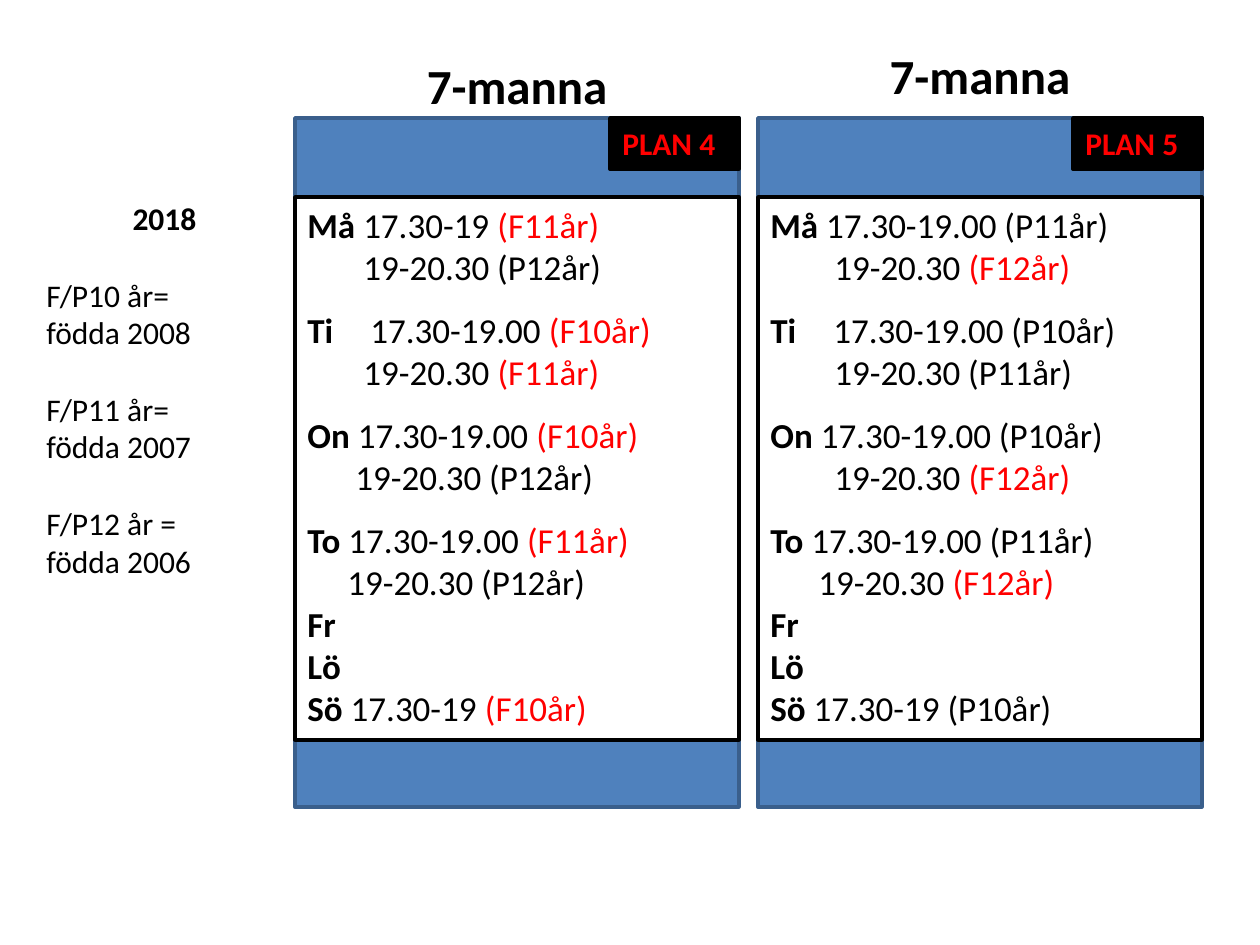
import dataclasses

import lxml.etree
import pptx
import pptx.dml.color
import pptx.enum.shapes
import pptx.enum.text
import pptx.oxml.ns
import pptx.util

PX = 914400 / 126
SPACE = 8
TAB = 50


@dataclasses.dataclass(frozen=True)
class Theme:
    """Colours and type sizes of the schedule."""
    font: str = "Calibri"
    black: str = "000000"
    white: str = "FFFFFF"
    red: str = "FF0000"
    field: str = "4F81BD"
    field_edge: str = "3A5F8C"
    heading: int = 28
    session: int = 20
    note: int = 18
    edge: int = 2
    session_gap: int = 12
    note_gap: int = 22


THEME = Theme()

PITCHES = [
    {"left": 295, "heading_top": 49, "label": "PLAN 4", "sessions": [
        ("Må ", 0, "17.30-19 ", "(F11år)"),
        ("", 7, "19-20.30 ", "(P12år)"),
        ("Ti\t", 0, "17.30-19.00 ", "(F10år)"),
        ("", 7, "19-20.30 ", "(F11år)"),
        ("On ", 0, "17.30-19.00 ", "(F10år)"),
        ("", 6, "19-20.30 ", "(P12år)"),
        ("To ", 0, "17.30-19.00 ", "(F11år)"),
        ("", 5, "19-20.30 ", "(P12år)"),
        ("Fr", 0, "", ""),
        ("Lö", 0, "", ""),
        ("Sö ", 0, "17.30-19 ", "(F10år)")]},
    {"left": 758, "heading_top": 39, "label": "PLAN 5", "sessions": [
        ("Må ", 0, "17.30-19.00 ", "(P11år)"),
        ("", 8, "19-20.30 ", "(F12år)"),
        ("Ti\t", 0, "17.30-19.00 ", "(P10år)"),
        ("", 8, "19-20.30 ", "(P11år)"),
        ("On ", 0, "17.30-19.00 ", "(P10år)"),
        ("", 8, "19-20.30 ", "(F12år)"),
        ("To ", 0, "17.30-19.00 ", "(P11år)"),
        ("", 6, "19-20.30 ", "(F12år)"),
        ("Fr", 0, "", ""),
        ("Lö", 0, "", ""),
        ("Sö ", 0, "17.30-19 ", "(P10år)")]},
]
SPACED_DAYS = ("Ti\t", "On ", "To ")

AGE_GROUPS = [("F/P10 år=", "födda 2008"), ("F/P11 år=", "födda 2007"),
              ("F/P12 år =", "födda 2006")]


def emu(px):
    """Turn px into EMU."""
    return pptx.util.Emu(round(px * PX))


def rgb(value):
    """Turn a hex string into a colour."""
    return pptx.dml.color.RGBColor.from_string(value)


def set_attributes(target, values):
    """Set each attribute named in a dict of format values."""
    for name, value in values.items():
        setattr(target, name, value)


def prepare_frame(frame):
    """Make a text frame wrap, start at the top and fit its text."""
    set_attributes(frame, {
        "word_wrap": True,
        "vertical_anchor": pptx.enum.text.MSO_ANCHOR.TOP,
        "auto_size": pptx.enum.text.MSO_AUTO_SIZE.SHAPE_TO_FIT_TEXT})
    return frame


def add_panel(slide, box, fill, edge):
    """Add a filled rectangle and return its text frame."""
    panel = slide.shapes.add_shape(
        pptx.enum.shapes.MSO_SHAPE.RECTANGLE, *map(emu, box))
    panel.shadow.inherit = False
    panel.fill.solid()
    panel.fill.fore_color.rgb = rgb(fill)
    panel.line.color.rgb = rgb(edge)
    panel.line.width = pptx.util.Pt(THEME.edge)
    return panel.text_frame


def add_label(slide, box):
    """Add a text box and return its prepared frame."""
    return prepare_frame(slide.shapes.add_textbox(*map(emu, box)).text_frame)


def add_line(frame, runs, size, centred=False, gap=0):
    """Write one paragraph from (text, bold, colour) runs."""
    first = not frame.paragraphs[0].runs
    line = frame.paragraphs[0] if first else frame.add_paragraph()
    align = pptx.enum.text.PP_ALIGN
    set_attributes(line, {
        "alignment": align.CENTER if centred else align.LEFT,
        "space_before": pptx.util.Pt(gap)})
    for text, bold, colour in runs:
        if text:
            run = line.add_run()
            run.text = text
            set_attributes(run.font, {"name": THEME.font, "bold": bold,
                                      "size": pptx.util.Pt(size)})
            run.font.color.rgb = rgb(colour)
    return line


def indent_line(line, spaces):
    """Indent a session line and give it the tab stop for its time."""
    properties = line._p.get_or_add_pPr()
    properties.set("marL", str(emu(spaces * SPACE)))
    properties.set("indent", "0")
    stops = lxml.etree.SubElement(properties, pptx.oxml.ns.qn("a:tabLst"))
    lxml.etree.SubElement(stops, pptx.oxml.ns.qn("a:tab"),
                          pos=str(emu(TAB)), algn="l")


def add_pitch(slide, box, heading_top, label, sessions):
    """Draw one pitch with its heading, name tag and training times."""
    left, top, width, height = box
    add_panel(slide, box, THEME.field, THEME.field_edge)

    schedule = prepare_frame(add_panel(
        slide, (left, top + 79, width, 543), THEME.white, THEME.black))
    for day, spaces, time, group in sessions:
        group_colour = THEME.red if group.startswith("(F") else THEME.black
        line = add_line(
            schedule,
            [(day, True, THEME.black), (time, False, THEME.black),
             (group, False, group_colour)],
            THEME.session,
            gap=THEME.session_gap if day in SPACED_DAYS else 0)
        indent_line(line, spaces)

    tag_width = 129
    tag = prepare_frame(add_panel(
        slide, (left + width - tag_width, top, tag_width, 51),
        THEME.black, THEME.black))
    add_line(tag, [(label, True, THEME.red)], THEME.note)

    heading = add_label(slide, (left, heading_top, width, 72))
    add_line(heading, [("7-manna", True, THEME.black)], THEME.heading, True)


def add_age_guide(slide, box):
    """List the birth year of each age group."""
    guide = add_label(slide, box)
    add_line(guide, [("2018", True, THEME.black)], THEME.note, True)
    for group, born in AGE_GROUPS:
        add_line(guide, [(group, False, THEME.black)], THEME.note,
                 gap=THEME.note_gap)
        add_line(guide, [(born, False, THEME.black)], THEME.note)


def main():
    """Build and save the schedule slide."""
    deck = pptx.Presentation()
    set_attributes(deck, {"slide_width": emu(1260), "slide_height": emu(945)})
    slide = deck.slides.add_slide(deck.slide_layouts[6])
    for pitch in PITCHES:
        add_pitch(slide, (pitch["left"], 118, 444, 689),
                  pitch["heading_top"], pitch["label"], pitch["sessions"])
    add_age_guide(slide, (34, 193, 261, 432))
    deck.save("out.pptx")


if __name__ == "__main__":
    main()
